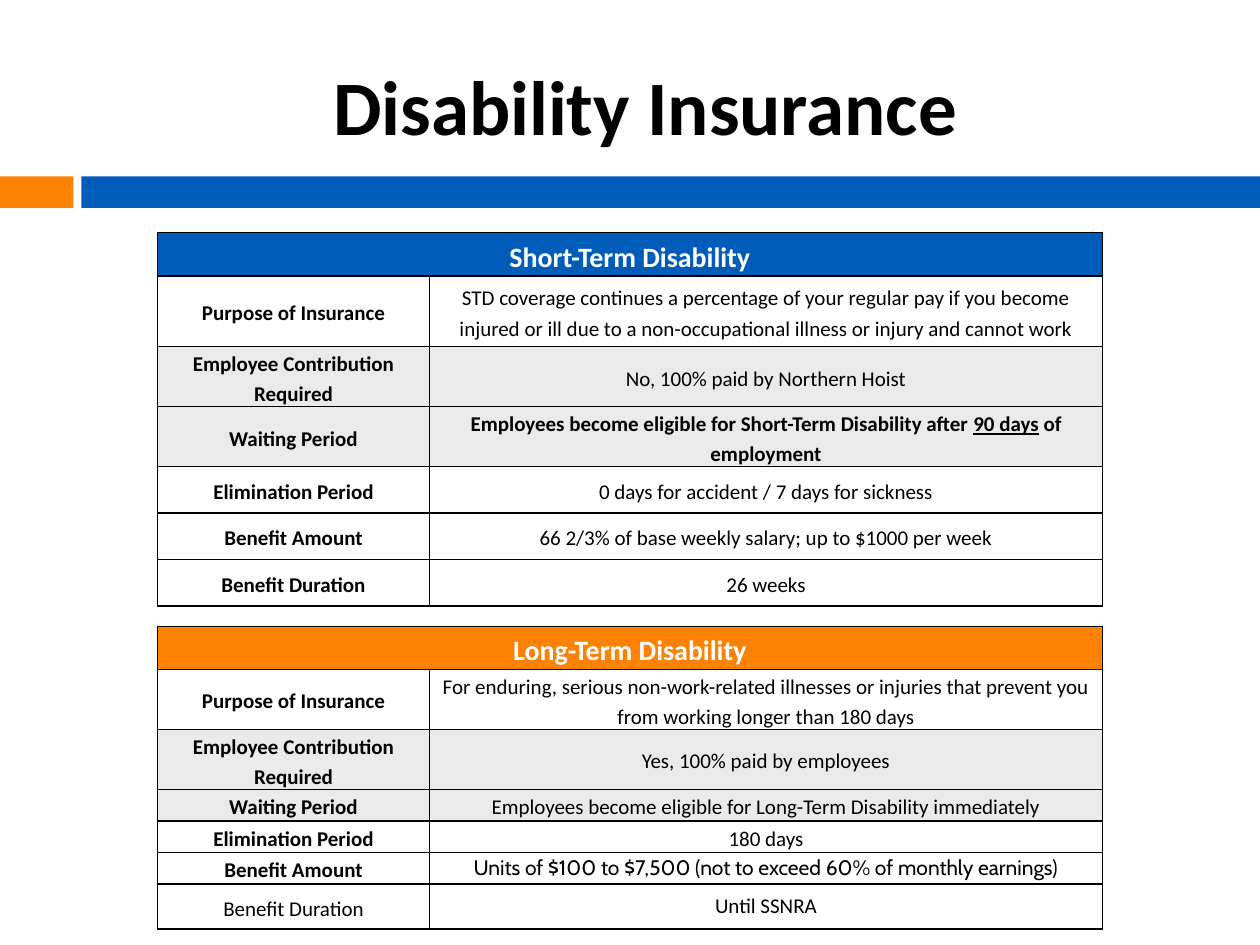
"""Build the disability insurance slide with its short-term and long-term tables."""
from lxml import etree
from pptx import Presentation
from pptx.dml.color import RGBColor
from pptx.enum.shapes import MSO_SHAPE
from pptx.enum.text import MSO_ANCHOR, PP_ALIGN
from pptx.oxml.ns import qn
from pptx.util import Pt

CENTER = PP_ALIGN.CENTER
MIDDLE = MSO_ANCHOR.MIDDLE
RECTANGLE = MSO_SHAPE.RECTANGLE
BLACK = RGBColor(0x00, 0x00, 0x00)
WHITE = RGBColor(0xFF, 0xFF, 0xFF)
BLUE = RGBColor(0x00, 0x5C, 0xB9)
ORANGE = RGBColor(0xFD, 0x81, 0x03)
GRAY = RGBColor(0xEA, 0xEA, 0xEA)

LABEL = {"name": "Calibri", "size": Pt(12), "bold": True}
VALUE = {**LABEL, "bold": False}
UNDERLINED = {**LABEL, "underline": True}
CABIN = {**VALUE, "name": "Cabin"}
HEADING = {**LABEL, "size": Pt(16)}
TITLE = {**LABEL, "size": Pt(44)}
PLAIN = {"alignment": CENTER}
TIGHT = {**PLAIN, "line_spacing": 1.19}
SPACED = {**TIGHT, "space_before": Pt(4), "space_after": Pt(6)}
CELL = {"vertical_anchor": MIDDLE, "margin_left": Pt(5), "margin_right": Pt(5),
        "margin_top": 0, "margin_bottom": 0}

LABELS = ["Purpose of Insurance", "Employee Contribution Required", "Waiting Period",
          "Elimination Period", "Benefit Amount", "Benefit Duration"]
SHADED_ROWS = (2, 3)
COLUMN_WIDTHS = (155.5, 384.5)

SHORT_TERM = [
    [("STD coverage continues a percentage of your regular pay if you become "
      "injured or ill due to a non-occupational illness or injury and cannot work", VALUE)],
    [("No, 100% paid by Northern Hoist", VALUE)],
    [("Employees become eligible for Short-Term Disability after ", LABEL),
     ("90 days", UNDERLINED), (" of employment", LABEL)],
    [("0 days for accident / 7 days for sickness", VALUE)],
    [("66 2/3% of base weekly salary; up to $1000 per week", VALUE)],
    [("26 weeks", VALUE)],
]
LONG_TERM = [
    [("For enduring, serious non-work-related illnesses or injuries that prevent you "
      "from working longer than 180 days", VALUE)],
    [("Yes, 100% paid by employees", VALUE)],
    [("Employees become eligible for Long-Term Disability immediately", VALUE)],
    [("180 days", VALUE)],
    [("Units of $100 to $7,500 (not to exceed 60% of monthly earnings)", CABIN)],
    [("Until SSNRA", VALUE)],
]


def apply(target, formats):
    """Set every attribute in formats on target."""
    for name, value in formats.items():
        setattr(target, name, value)


class SlideBuilder:
    """Holds the slide and draws its elements in one style."""

    def __init__(self, slide, border_color=BLACK):
        self.slide = slide
        self.border_color = border_color

    def add_text(self, frame, runs, paragraph_format, color=BLACK):
        """Fill the first paragraph with formatted runs."""
        paragraph = frame.paragraphs[0]
        apply(paragraph, paragraph_format)
        for text, font_format in runs:
            run = paragraph.add_run()
            run.text = text
            apply(run.font, font_format)
            run.font.color.rgb = color

    def title(self, text, left, top, width, height):
        """Add the centred slide title."""
        frame = self.slide.shapes.add_textbox(Pt(left), Pt(top), Pt(width), Pt(height)).text_frame
        apply(frame, {"word_wrap": True, "vertical_anchor": MIDDLE})
        self.add_text(frame, [(text, TITLE)], PLAIN)

    def bar(self, left, top, width, height, color):
        """Add a plain coloured bar."""
        bar = self.slide.shapes.add_shape(RECTANGLE, Pt(left), Pt(top), Pt(width), Pt(height))
        bar.shadow.inherit = False
        bar.fill.solid()
        bar.fill.fore_color.rgb = color
        bar.line.fill.background()

    def cell(self, cell, fill, bottom):
        """Set the margins, borders and fill of a cell."""
        apply(cell, CELL)
        properties = cell._tc.get_or_add_tcPr()
        for side, points in (("L", 1), ("R", 1), ("T", 1), ("B", bottom)):
            line = etree.SubElement(properties, qn(f"a:ln{side}"), w=str(Pt(points)))
            solid = etree.SubElement(line, qn("a:solidFill"))
            etree.SubElement(solid, qn("a:srgbClr"), val=str(self.border_color))
        if fill is None:
            cell.fill.background()
        else:
            cell.fill.solid()
            cell.fill.fore_color.rgb = fill

    def benefit_table(self, heading, color, details, left, top, heights,
                      label_formats=None, detail_formats=None):
        """Add a headed table of labels and details."""
        label_formats = label_formats or {}
        detail_formats = detail_formats or {}
        table = self.slide.shapes.add_table(
            len(heights), len(COLUMN_WIDTHS), Pt(left), Pt(top),
            Pt(sum(COLUMN_WIDTHS)), Pt(sum(heights))).table
        apply(table, {"first_row": False, "horz_banding": False})
        for column, width in zip(table.columns, COLUMN_WIDTHS):
            column.width = Pt(width)
        for index, height in enumerate(heights):
            table.rows[index].height = Pt(height)
            fill = color if index == 0 else GRAY if index in SHADED_ROWS else None
            bottom = 1.5 if index == len(heights) - 1 else 1
            for cell in table.rows[index].cells:
                self.cell(cell, fill, bottom)
        table.cell(0, 0).merge(table.cell(0, 1))
        self.add_text(table.cell(0, 0).text_frame, [(heading, HEADING)], TIGHT, WHITE)
        for index, (label, detail) in enumerate(zip(LABELS, details), start=1):
            label_run = (label, label_formats.get(label, LABEL))
            self.add_text(table.cell(index, 0).text_frame, [label_run], SPACED)
            self.add_text(table.cell(index, 1).text_frame, detail,
                          detail_formats.get(label, SPACED))


def main():
    """Create and save the slide."""
    presentation = Presentation()
    apply(presentation, {"slide_width": Pt(720), "slide_height": Pt(540)})
    builder = SlideBuilder(presentation.slides.add_slide(presentation.slide_layouts[6]))
    builder.bar(0, 100.8, 42, 18, ORANGE)
    builder.bar(46.5, 100.8, 673.5, 18, BLUE)
    builder.title("Disability Insurance", 48, 18, 642, 84)
    builder.benefit_table("Short-Term Disability", BLUE, SHORT_TERM, 90, 132.8,
                          (25, 40.3, 30.2, 30.2, 26.6, 26.6, 26.6))
    builder.benefit_table("Long-Term Disability", ORANGE, LONG_TERM, 90, 358,
                          (24.5, 31, 28.8, 18, 18, 18, 26),
                          label_formats={"Benefit Duration": VALUE},
                          detail_formats={"Benefit Amount": PLAIN, "Benefit Duration": PLAIN})
    presentation.save("out.pptx")


if __name__ == "__main__":
    main()
